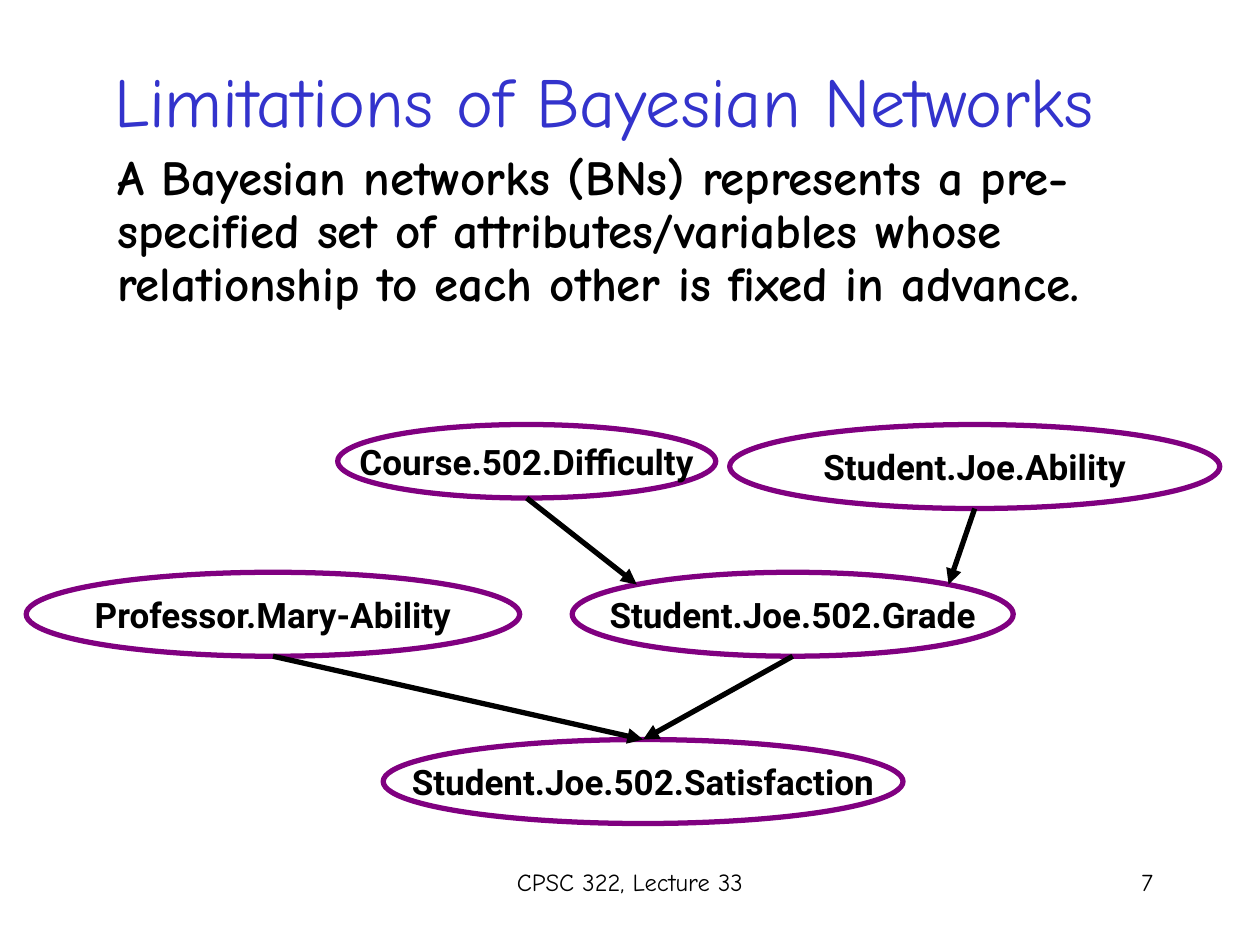
import math

import pptx
import pptx.dml.color
import pptx.enum.shapes
import pptx.enum.text
import pptx.oxml
import pptx.oxml.ns
import pptx.util

Pt = pptx.util.Pt
ALIGN = pptx.enum.text.PP_ALIGN
ANCHOR = pptx.enum.text.MSO_ANCHOR

BLUE, BLACK, WHITE, PURPLE = "3333CC", "000000", "FFFFFF", "800080"
HAND, SANS = "Comic Neue", "Roboto"
STROKE = 3

# text, (left, top, width, height), size, colour, bold, alignment, anchor
TEXTS = [
    ("Limitations of Bayesian Networks", (-12, 12, 714, 90), 40, BLUE, False,
     ALIGN.CENTER, ANCHOR.MIDDLE),
    ("A Bayesian networks (BNs) represents a pre-specified set of "
     "attributes/variables whose relationship to each other is fixed in advance.",
     (60, 84, 612, 228), 28, BLACK, True, ALIGN.LEFT, ANCHOR.TOP),
    ("CPSC 322, Lecture 33", (246, 492, 228, 36), 14, BLACK, False,
     ALIGN.CENTER, ANCHOR.TOP),
    ("7", (516, 492, 150, 36), 14, BLACK, False, ALIGN.RIGHT, ANCHOR.TOP),
]

# key: (label, (left, top, width, height))
VARIABLES = {
    "difficulty": ("Course.502.Difficulty", (193, 242.6, 216, 42)),
    "professor": ("Professor.Mary-Ability", (15, 327, 282, 48)),
    "ability": ("Student.Joe.Ability", (417, 242.6, 280, 48)),
    "grade": ("Student.Joe.502.Grade", (327, 327, 252, 48)),
    "satisfaction": ("Student.Joe.502.Satisfaction", (219, 422.6, 297, 48)),
}

# cause, effect, angle on the effect's outline in degrees (90 is the top)
DEPENDENCIES = [
    ("difficulty", "grade", 135),
    ("ability", "grade", 45),
    ("grade", "satisfaction", 90),
    ("professor", "satisfaction", 90),
]


def color(hex_string):
    return pptx.dml.color.RGBColor.from_string(hex_string)


def write(shape, text, size, font_name, font_color, bold, alignment, anchor, wrap=True):
    frame = shape.text_frame
    frame.word_wrap = wrap
    frame.vertical_anchor = anchor
    paragraph = frame.paragraphs[0]
    paragraph.text = text
    paragraph.alignment = alignment
    font = paragraph.font
    font.size, font.name, font.bold = Pt(size), font_name, bold
    font.color.rgb = color(font_color)
    return paragraph


def rim_point(box, degrees):
    """Point on the ellipse inside box, counted anticlockwise from the right."""
    left, top, width, height = box
    angle = math.radians(degrees)
    return (Pt(left + width / 2 * (1 + math.cos(angle))),
            Pt(top + height / 2 * (1 - math.sin(angle))))


def add_variable(slide, label, box):
    oval = slide.shapes.add_shape(pptx.enum.shapes.MSO_SHAPE.OVAL, *map(Pt, box))
    oval.shadow.inherit = False
    oval.fill.solid()
    oval.fill.fore_color.rgb = color(WHITE)
    oval.line.color.rgb = color(PURPLE)
    oval.line.width = Pt(STROKE)
    write(oval, label, 20, SANS, BLACK, True, ALIGN.CENTER, ANCHOR.MIDDLE, wrap=False)
    return oval


def add_arrow(slide, start, end):
    arrow = slide.shapes.add_connector(
        pptx.enum.shapes.MSO_CONNECTOR.STRAIGHT, *start, *end)
    arrow.line.color.rgb = color(BLACK)
    arrow.line.width = Pt(STROKE)
    qn = pptx.oxml.ns.qn
    properties = arrow.line._get_or_add_ln()
    head = properties.makeelement(qn("a:tailEnd"), {"type": "triangle"})
    properties.append(head)
    properties.addnext(properties.makeelement(qn("a:effectLst"), {}))
    return arrow


def main():
    deck = pptx.Presentation()
    deck.slide_width, deck.slide_height = Pt(720), Pt(540)
    slide = deck.slides.add_slide(deck.slide_layouts[6])

    for text, box, size, text_color, bold, alignment, anchor in TEXTS:
        area = slide.shapes.add_textbox(*map(Pt, box))
        paragraph = write(area, text, size, HAND, text_color, bold, alignment, anchor)
        if bold:
            paragraph.line_spacing = 0.9
            paragraph.space_before = Pt(size * 0.2)

    ovals = {key: add_variable(slide, *variable) for key, variable in VARIABLES.items()}

    for cause, effect, degrees in DEPENDENCIES:
        arrow = add_arrow(slide, rim_point(VARIABLES[cause][1], 270),
                          rim_point(VARIABLES[effect][1], degrees))
        if degrees == 90:
            arrow.end_connect(ovals[effect], 0)

    deck.save("out.pptx")


if __name__ == "__main__":
    main()
